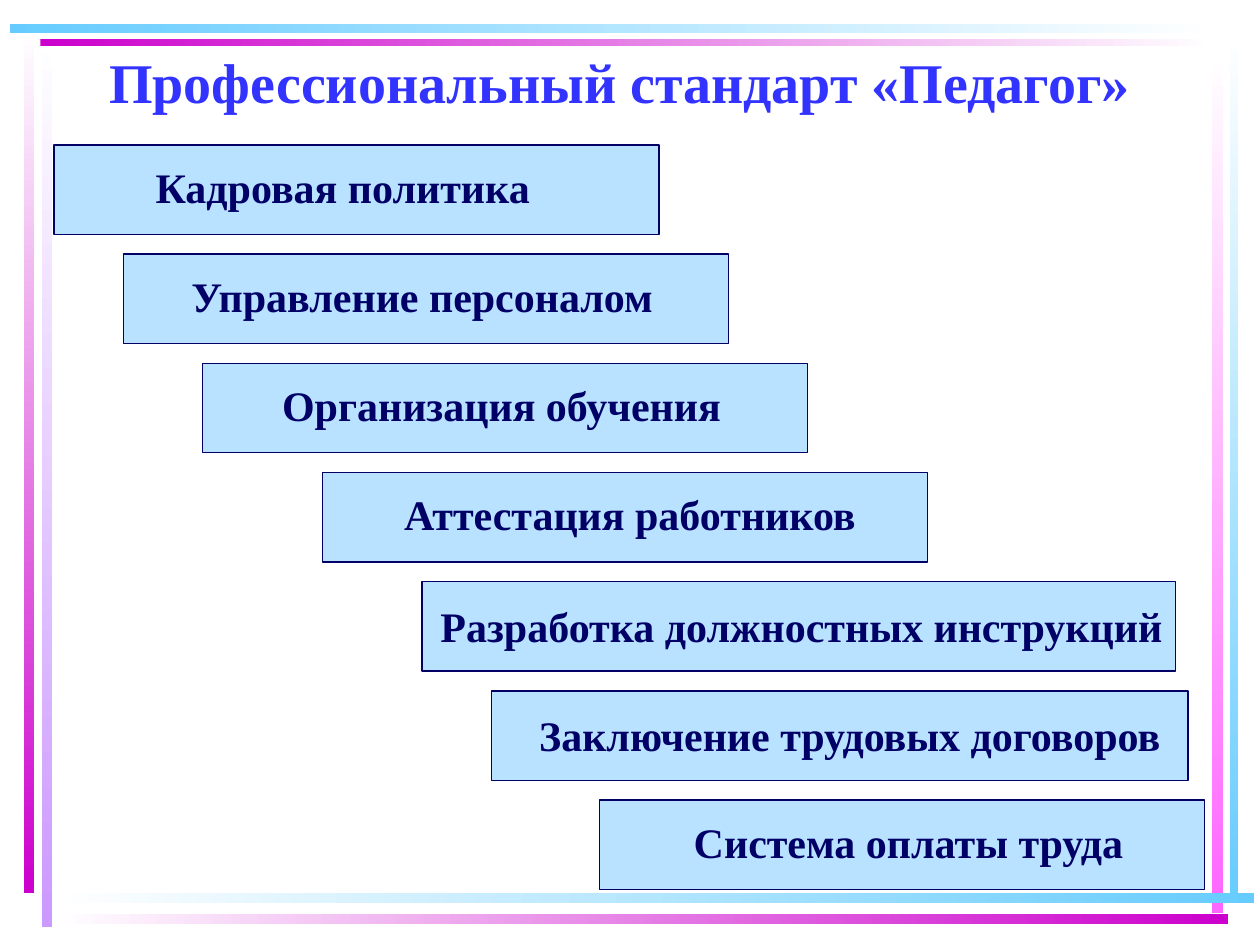
import pptx
import pptx.dml.color
import pptx.enum.shapes
import pptx.enum.text
import pptx.util

INCH = pptx.util.Inches
FONT = "Times New Roman"
WHITE, NAVY, PALE_BLUE, TITLE_BLUE = "FFFFFF", "000066", "B8E2FF", "3333FF"
SKY, MAGENTA, PINK, LILAC = "66CCFF", "CC00CC", "FF66FF", "CC99FF"
DOWN, RIGHT = 270, 0


def paint(color, value):
    color.rgb = pptx.dml.color.RGBColor.from_string(value)


def write(frame, text, size, color):
    paragraph = frame.paragraphs[0]
    paragraph.alignment = pptx.enum.text.PP_ALIGN.CENTER
    run = paragraph.add_run()
    run.text = text
    run.font.name = FONT
    run.font.size = pptx.util.Pt(size)
    run.font.bold = True
    paint(run.font.color, color)


presentation = pptx.Presentation()
presentation.slide_width = INCH(10)
presentation.slide_height = INCH(7.5)
slide = presentation.slides.add_slide(presentation.slide_layouts[5])
rectangle = pptx.enum.shapes.MSO_SHAPE.RECTANGLE

frame_bars = [
    (0.33, 0.28, 0.08, 7.08, WHITE, LILAC, DOWN),
    (0.19, 0.25, 0.08, 6.84, WHITE, MAGENTA, DOWN),
    (9.76, 0.24, 0.07, 6.93, WHITE, SKY, DOWN),
    (9.62, 0.42, 0.09, 6.83, WHITE, PINK, DOWN),
    (0.45, 7.09, 9.5, 0.08, WHITE, SKY, RIGHT),
    (0.45, 7.25, 9.3, 0.08, WHITE, MAGENTA, RIGHT),
    (0.32, 0.31, 9.32, 0.06, MAGENTA, WHITE, RIGHT),
    (0.08, 0.19, 9.56, 0.07, SKY, WHITE, RIGHT),
]
for left, top, width, height, first, last, angle in frame_bars:
    bar = slide.shapes.add_shape(rectangle, INCH(left), INCH(top), INCH(width), INCH(height))
    bar.shadow.inherit = False
    bar.line.fill.background()
    bar.fill.gradient()
    bar.fill.gradient_angle = angle
    for stop, color, position in zip(bar.fill.gradient_stops, (first, last), (0, 1)):
        paint(stop.color, color)
        stop.position = position

title = slide.shapes.title
title.left, title.top, title.width, title.height = INCH(0.67), INCH(0.29), INCH(8.5), INCH(0.71)
title.text_frame.vertical_anchor = pptx.enum.text.MSO_ANCHOR.MIDDLE
write(title.text_frame, "Профессиональный стандарт «Педагог»", 32, TITLE_BLUE)

first_row, row_pitch, step_height, label_height = 1.15, 5.2 / 6, 0.71, 0.5
steps = [
    ("Кадровая политика", 0.43, 4.8, 0.75, 3.94, 0.08),
    ("Управление персоналом", 0.98, 4.8, 1.38, 3.94, 0.08),
    ("Организация обучения", 1.61, 4.8, 2.01, 3.94, 0.08),
    ("Аттестация работников", 2.56, 4.8, 3.03, 3.94, 0.08),
    ("Разработка должностных инструкций", 3.35, 5.98, 3.29, 6.14, 0.1),
    ("Заключение трудовых договоров", 3.9, 5.53, 4.06, 5.37, 0.1),
    ("Система оплаты труда", 4.76, 4.8, 5.24, 3.94, 0.08),
]
for row, (text, left, width, label_left, label_width, drop) in enumerate(steps):
    top = first_row + row * row_pitch
    step = slide.shapes.add_shape(rectangle, INCH(left), INCH(top), INCH(width), INCH(step_height))
    step.shadow.inherit = False
    step.fill.solid()
    paint(step.fill.fore_color, PALE_BLUE)
    paint(step.line.color, NAVY)
    step.line.width = pptx.util.Pt(0.75)
    label = slide.shapes.add_textbox(
        INCH(label_left), INCH(top + drop), INCH(label_width), INCH(label_height))
    label.text_frame.word_wrap = True
    label.text_frame.auto_size = pptx.enum.text.MSO_AUTO_SIZE.SHAPE_TO_FIT_TEXT
    write(label.text_frame, text, 24, NAVY)

presentation.save("out.pptx")
